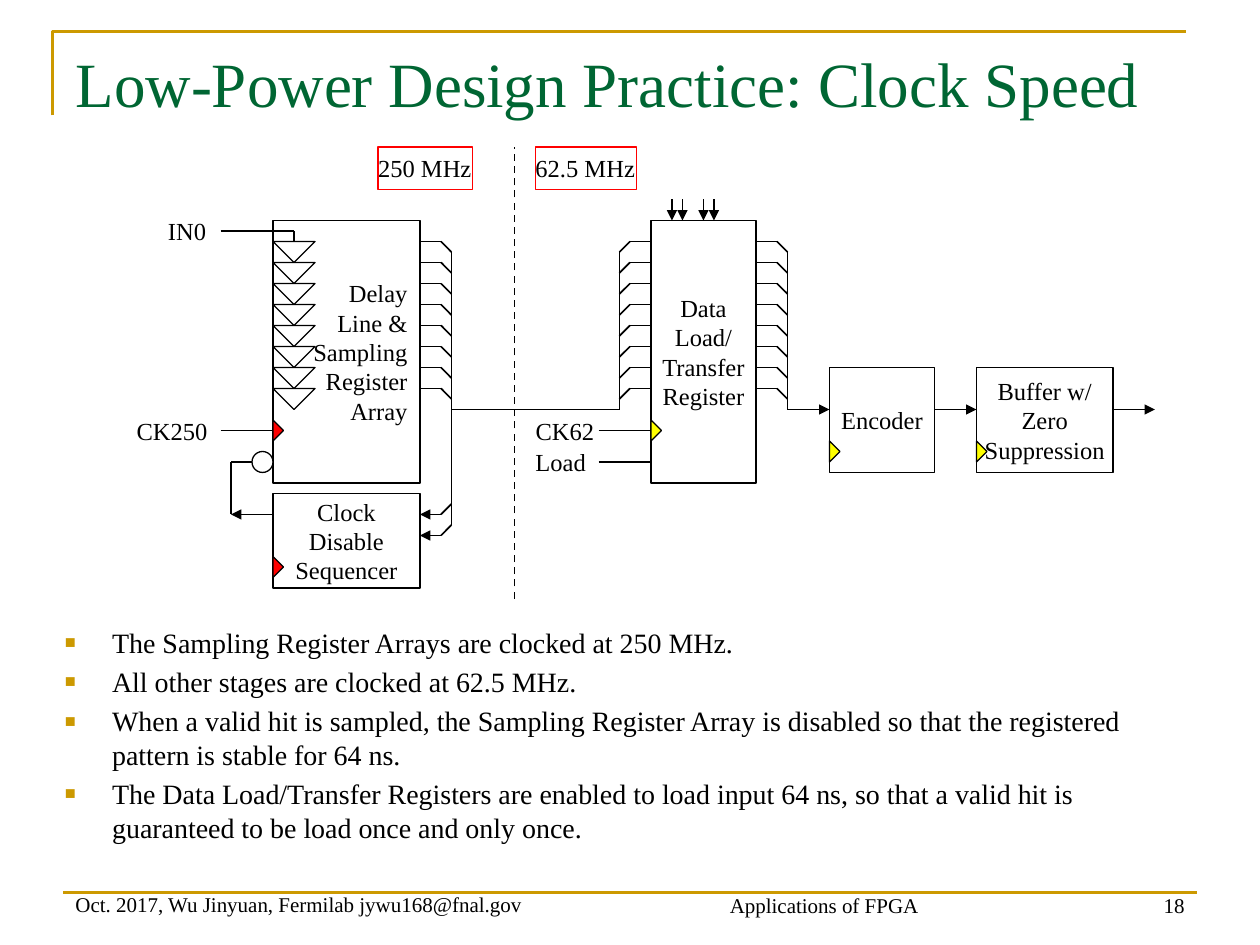
import pptx
import pptx.util
import pptx.dml.color
import pptx.oxml
import pptx.oxml.ns
from pptx.enum.dml import MSO_LINE
from pptx.enum.shapes import MSO_CONNECTOR, MSO_SHAPE
from pptx.enum.text import MSO_ANCHOR, MSO_AUTO_SIZE, PP_ALIGN

Pt = pptx.util.Pt
FONT = "Times New Roman"
BLACK, WHITE, RED, YELLOW = "000000", "FFFFFF", "FF0000", "FFFF00"
GOLD, GREEN = "CC9900", "006633"
LEFT, CENTER, RIGHT = PP_ALIGN.LEFT, PP_ALIGN.CENTER, PP_ALIGN.RIGHT
U = 6  # diagram grid step in points

# Content
TITLE = "Low-Power Design Practice: Clock Speed"
BULLETS = [
    "The Sampling Register Arrays are clocked at 250 MHz.",
    "All other stages are clocked at 62.5 MHz.",
    "When a valid hit is sampled, the Sampling Register Array is disabled so that "
    "the registered pattern is stable for 64 ns.",
    "The Data Load/Transfer Registers are enabled to load input 64 ns, so that a "
    "valid hit is guaranteed to be load once and only once.",
]
# Footer: text, box in points, alignment
FOOTERS = [
    ("Oct. 2017, Wu Jinyuan, Fermilab jywu168@fnal.gov", (36, 510, 276, 17.5), LEFT),
    ("Applications of FPGA", (318, 504, 306, 24), CENTER),
    ("18", (630, 510, 54, 18), RIGHT),
]
# Everything below is in grid steps
BLOCKS = [
    (["Delay", "Line &", "Sampling", "Register", "Array"], (26, 21, 14, 25), RIGHT),
    (["Data", "Load/", "Transfer", "Register"], (62, 21, 10, 25), CENTER),
    (["Clock", "Disable", "Sequencer"], (26, 47, 14, 9), CENTER),
    (["Encoder"], (79, 35, 10, 10), CENTER),
    (["Buffer w/", "Zero", "Suppression"], (93, 35, 13, 10), CENTER),
]
# Label: text, left, top, width, outline
LABELS = [
    ("IN0", 16, 20, 3.8, None),
    ("CK250", 13, 39, 6.9, None),
    ("CK62", 51, 39, 5.7, None),
    ("Load", 51, 42, 5, None),
    ("250 MHz", 36, 14, 9, RED),
    ("62.5 MHz", 51, 14, 9.6, RED),
]
# Clock inputs: left edge, centre height, colour
CLOCKS = [(26, 41, RED), (26, 54, RED), (62, 41, YELLOW),
          (79, 43, YELLOW), (93, 43, YELLOW)]
# Bit taps: block edge, bend, bus
TAPS = [(40, 42, 43), (72, 74, 75), (62, 60, 59)]
ROWS = range(23, 39, 2)
WIRES = [
    [(21, 22), (28, 22), (28, 23)],            # IN0
    [(21, 41), (26, 41)],                      # CK250
    [(57, 41), (62, 41)],                      # CK62
    [(57, 44), (62, 44)],                      # Load
    [(43, 50), (43, 24)],                      # sampling bus
    [(43, 39), (59, 39), (59, 24)],            # bus to load register
    [(75, 39), (75, 24)],                      # output bus
    [(24, 44), (22, 44), (22, 49)],            # clock disable
]
ARROWS = [
    [(43, 48), (42, 49), (40, 49)],
    [(43, 50), (42, 51), (40, 51)],
    [(26, 49), (22, 49)],
    [(75, 39), (79, 39)],
    [(89, 39), (93, 39)],
    [(106, 39), (110, 39)],
] + [[(x, 19), (x, 21)] for x in (64, 65, 67, 68)]


def rgb(color):
    return pptx.dml.color.RGBColor.from_string(color)


def add_xml(parent, tag, **attrs):
    e = pptx.oxml.parse_xml("<a:%s %s/>" % (tag, pptx.oxml.ns.nsdecls("a")))
    for name, value in attrs.items():
        e.set(name, value)
    parent.append(e)
    return e


def write(tf, lines, size=14, color=BLACK, align=LEFT, anchor=MSO_ANCHOR.TOP,
          wrap=True, side=7.2, grow=False, bullet=False):
    tf.word_wrap = wrap
    tf.auto_size = MSO_AUTO_SIZE.SHAPE_TO_FIT_TEXT if grow else MSO_AUTO_SIZE.NONE
    tf.vertical_anchor = anchor
    tf.margin_left = tf.margin_right = Pt(side)
    tf.margin_top = tf.margin_bottom = Pt(3.6)
    for i, text in enumerate(lines):
        p = tf.paragraphs[0] if i == 0 else tf.add_paragraph()
        p.alignment = align
        if bullet:
            p.space_before = Pt(3.2 if i else 0)
            pPr = p._p.get_or_add_pPr()
            pPr.set("marL", str(Pt(27)))
            pPr.set("indent", str(-Pt(27)))
            add_xml(add_xml(pPr, "buClr"), "srgbClr", val=GOLD)
            add_xml(pPr, "buSzPct", val="65000")
            add_xml(pPr, "buFont", typeface=FONT)
            add_xml(pPr, "buChar", char="■")
        r = p.add_run()
        r.text = text
        r.font.name, r.font.size = FONT, Pt(size)
        r.font.color.rgb = rgb(color)


def text_box(s, box, lines, **fmt):
    sp = s.shapes.add_textbox(*map(Pt, box))
    write(sp.text_frame, lines, **fmt)
    return sp


def shape(s, kind, box, fill=WHITE, rotation=0):
    sp = s.shapes.add_shape(kind, *(Pt(v * U) for v in box))
    sp.shadow.inherit = False
    sp.fill.solid()
    sp.fill.fore_color.rgb = rgb(fill)
    sp.line.color.rgb = rgb(BLACK)
    sp.line.width = Pt(0.75)
    sp.rotation = rotation
    return sp


def line(s, start, end, color=BLACK, width=1, dash=False, arrow=False):
    c = s.shapes.add_connector(MSO_CONNECTOR.STRAIGHT,
                               *(Pt(v * U) for v in start + end))
    c.line.color.rgb = rgb(color)
    c.line.width = Pt(width)
    if dash:
        c.line.dash_style = MSO_LINE.DASH
    if arrow:
        add_xml(c.line._get_or_add_ln(), "tailEnd", type="triangle")
    add_xml(c._element.spPr, "effectLst")


def wire(s, points, arrow=False):
    last = len(points) - 2
    for i, (a, b) in enumerate(zip(points, points[1:])):
        line(s, a, b, arrow=arrow and i == last)


def main():
    prs = pptx.Presentation()
    prs.slide_width, prs.slide_height = Pt(720), Pt(540)
    s = prs.slides.add_slide(prs.slide_layouts[5])

    # Frame, title and footer
    fb = s.shapes.build_freeform(Pt(30), Pt(66), scale=1.0)
    fb.add_line_segments([(Pt(30), Pt(18)), (Pt(678), Pt(18))], close=False)
    frame = fb.convert_to_shape()
    frame.shadow.inherit = False
    frame.fill.background()
    frame.line.color.rgb = rgb(GOLD)
    frame.line.width = Pt(1.5)
    line(s, (6, 85), (114, 85), color=GOLD, width=1.5)

    title = s.shapes.title
    title.left, title.top, title.width, title.height = map(Pt, (36, 21.6, 648, 50.4))
    write(title.text_frame, [TITLE], size=36, color=GREEN)
    for text, box, align in FOOTERS:
        text_box(s, box, [text], size=12, align=align, anchor=MSO_ANCHOR.BOTTOM)

    # Blocks, delay line, clock inputs and inverter bubble
    for lines, box, align in BLOCKS:
        sp = shape(s, MSO_SHAPE.RECTANGLE, box)
        write(sp.text_frame, lines, align=align, anchor=MSO_ANCHOR.MIDDLE, wrap=False)
    for y in ROWS:
        shape(s, MSO_SHAPE.ISOSCELES_TRIANGLE, (26, y, 4, 2), rotation=180)
    for x, y, color in CLOCKS:
        shape(s, MSO_SHAPE.ISOSCELES_TRIANGLE, (x - 0.5, y - 0.5, 2, 1), color, 90)
    shape(s, MSO_SHAPE.OVAL, (24, 43, 2, 2))

    # Wiring
    for edge, bend, bus in TAPS:
        for y in ROWS:
            wire(s, [(edge, y), (bend, y), (bus, y + 1)])
    for points in WIRES:
        wire(s, points)
    for points in ARROWS:
        wire(s, points, arrow=True)
    line(s, (49, 57), (49, 14), dash=True)

    # Labels and bullets
    for text, x, y, w, outline in LABELS:
        sp = text_box(s, (x * U, y * U, w * U, 24.5), [text],
                      wrap=False, side=0, grow=True)
        if outline:
            sp.line.color.rgb = rgb(outline)
            sp.line.width = Pt(0.75)
    text_box(s, (30, 354, 654, 144), BULLETS, size=16, bullet=True)

    prs.save("out.pptx")


if __name__ == "__main__":
    main()
